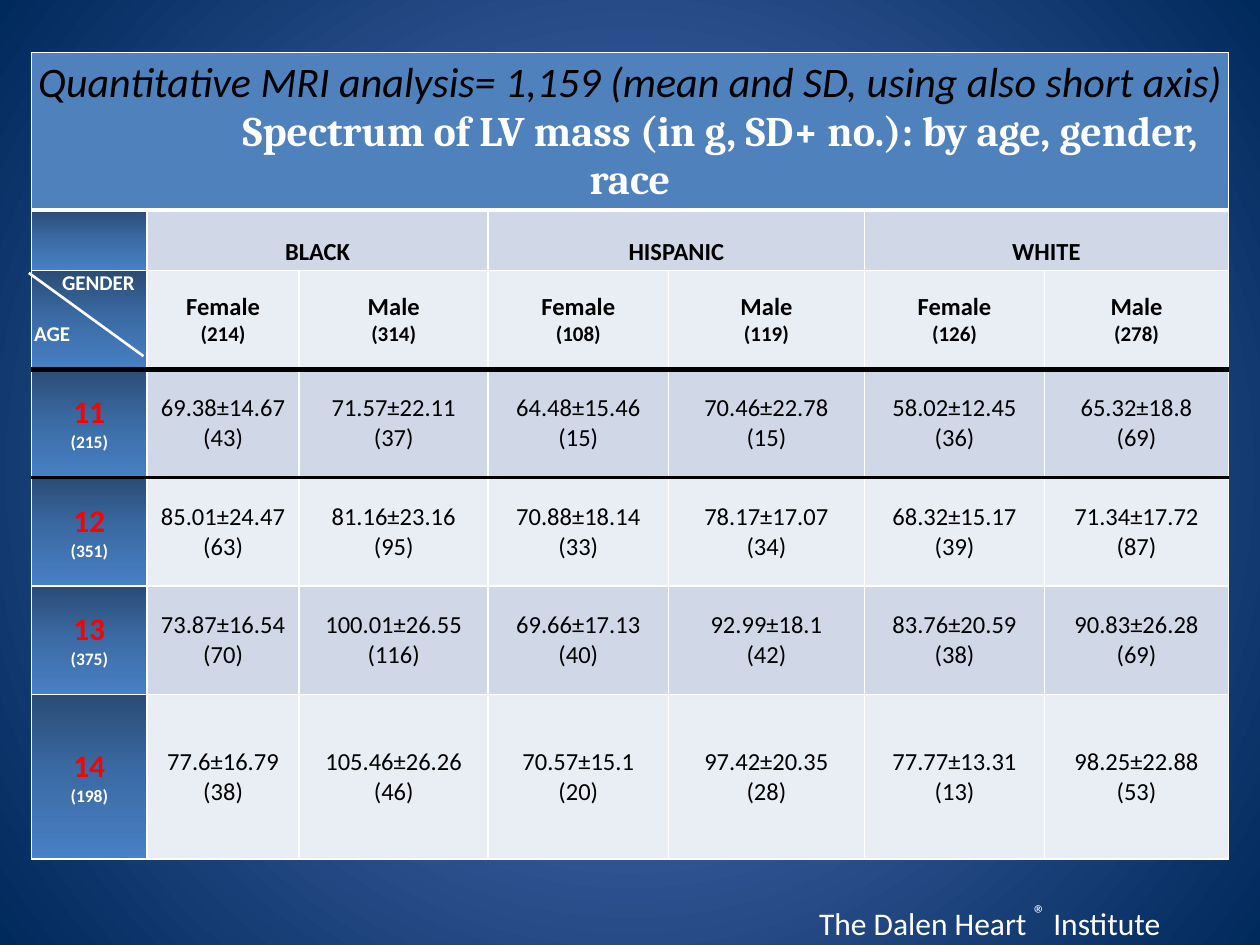
import pptx
import pptx.dml.color
import pptx.enum.shapes
import pptx.enum.text
import pptx.oxml
import pptx.oxml.ns
import pptx.util

Pt = pptx.util.Pt
RGBColor = pptx.dml.color.RGBColor
PP_ALIGN = pptx.enum.text.PP_ALIGN
MSO_ANCHOR = pptx.enum.text.MSO_ANCHOR
NS = pptx.oxml.ns.nsdecls("a")

WHITE = RGBColor(0xFF, 0xFF, 0xFF)
BLACK = RGBColor(0, 0, 0)
RED = RGBColor(0xFF, 0, 0)
TITLE_BLUE = RGBColor(0x4F, 0x81, 0xBD)
BAND_DARK = RGBColor(0xD0, 0xD8, 0xE8)
BAND_LIGHT = RGBColor(0xE9, 0xED, 0xF4)
SIDE_STOPS = [
    (0, RGBColor(0x2A, 0x4C, 0x75)),
    (50, RGBColor(0x3C, 0x6C, 0xA6)),
    (100, RGBColor(0x47, 0x80, 0xC5)),
]
BACK_STOPS = [(0, RGBColor(0x5E, 0x7C, 0xC5)), (100, RGBColor(0, 0x29, 0x5C))]
DOWNWARD = '<a:lin ang="5400000" scaled="0"/>'
RADIAL = (
    '<a:path path="circle">'
    '<a:fillToRect l="50000" t="50000" r="50000" b="50000"/></a:path>'
)

COLUMNS = [66, 87, 108, 103, 112, 103, 105]
ROWS = [90, 34.5, 56.5, 62, 62, 62, 94]
RACES = ["BLACK", "HISPANIC", "WHITE"]
GENDERS = [
    ("Female", "(214)"), ("Male", "(314)"), ("Female", "(108)"),
    ("Male", "(119)"), ("Female", "(126)"), ("Male", "(278)"),
]
AGES = [
    ("11", "(215)", [
        ("69.38±14.67", "(43)"), ("71.57±22.11", "(37)"), ("64.48±15.46", "(15)"),
        ("70.46±22.78", "(15)"), ("58.02±12.45", "(36)"), ("65.32±18.8", "(69)")]),
    ("12", "(351)", [
        ("85.01±24.47", "(63)"), ("81.16±23.16", "(95)"), ("70.88±18.14", "(33)"),
        ("78.17±17.07", "(34)"), ("68.32±15.17", "(39)"), ("71.34±17.72", "(87)")]),
    ("13", "(375)", [
        ("73.87±16.54", "(70)"), ("100.01±26.55", "(116)"), ("69.66±17.13", "(40)"),
        ("92.99±18.1", "(42)"), ("83.76±20.59", "(38)"), ("90.83±26.28", "(69)")]),
    ("14", "(198)", [
        ("77.6±16.79", "(38)"), ("105.46±26.26", "(46)"), ("70.57±15.1", "(20)"),
        ("97.42±20.35", "(28)"), ("77.77±13.31", "(13)"), ("98.25±22.88", "(53)")]),
]


def gradient(stops, direction):
    marks = "".join(
        f'<a:gs pos="{pos * 1000}"><a:srgbClr val="{color}"/></a:gs>'
        for pos, color in stops
    )
    return pptx.oxml.parse_xml(
        f'<a:gradFill {NS} rotWithShape="1"><a:gsLst>{marks}</a:gsLst>{direction}</a:gradFill>'
    )


def add_run(p, text, size, color, bold=False, italic=False, font="Calibri"):
    r = p.add_run()
    r.text = text
    r.font.size = Pt(size)
    r.font.name = font
    r.font.bold = bold
    r.font.italic = italic
    r.font.color.rgb = color
    return r


def indent(p, points):
    p._p.get_or_add_pPr().set("indent", str(Pt(points)))


def two_lines(cell, top, bottom):
    tf = cell.text_frame
    for p, run in ((tf.paragraphs[0], top), (tf.add_paragraph(), bottom)):
        p.alignment = PP_ALIGN.CENTER
        add_run(p, *run)


def rule_below(row):
    return {0: (WHITE, 3), 2: (BLACK, 3), 3: (BLACK, 2)}.get(row, (WHITE, 1))


def style_cell(cell, row, col):
    cell.margin_left = cell.margin_right = Pt(1.5)
    cell.margin_top = cell.margin_bottom = Pt(0)
    tcPr = cell._tc.get_or_add_tcPr()
    thin = (WHITE, 1)
    sides = {"L": thin, "R": thin, "T": rule_below(row - 1), "B": rule_below(row)}
    for side, (color, width) in sides.items():
        tcPr.append(pptx.oxml.parse_xml(
            f'<a:ln{side} {NS} w="{Pt(width)}"><a:solidFill>'
            f'<a:srgbClr val="{color}"/></a:solidFill></a:ln{side}>'
        ))
    if row and not col:
        tcPr.append(gradient(SIDE_STOPS, DOWNWARD))
    else:
        cell.fill.solid()
        band = BAND_DARK if row % 2 else BAND_LIGHT
        cell.fill.fore_color.rgb = band if row else TITLE_BLUE
    if row != 1 and (row, col) != (2, 0):
        cell.vertical_anchor = MSO_ANCHOR.MIDDLE


def fill_headings(table):
    title = table.cell(0, 0)
    title.merge(table.cell(0, 6))
    two_lines(
        title,
        ("Quantitative MRI analysis= 1,159 (mean and SD, using also short axis)",
         24, BLACK, False, True),
        ("Spectrum of LV mass (in g, SD+ no.): by age, gender, race",
         24, WHITE, True, False, "Cambria"),
    )
    indent(title.text_frame.paragraphs[1], 103)

    for i, race in enumerate(RACES):
        cell = table.cell(1, 1 + 2 * i)
        cell.merge(table.cell(1, 2 + 2 * i))
        p = cell.text_frame.paragraphs[0]
        p.alignment = PP_ALIGN.CENTER
        p.line_spacing = 1.9
        add_run(p, race, 14, BLACK, True)

    tf = table.cell(2, 0).text_frame
    p = tf.paragraphs[0]
    indent(p, 16)
    add_run(p, "GENDER", 12, WHITE, True)
    p = tf.add_paragraph()
    p.space_before = Pt(14.5)
    add_run(p, "AGE", 12, WHITE, True)

    for col, (gender, count) in enumerate(GENDERS, 1):
        two_lines(table.cell(2, col), (gender, 14, BLACK, True), (count, 12, BLACK, True))


def add_mass_table(s, left, top, width, height):
    table = s.shapes.add_table(
        len(ROWS), len(COLUMNS), Pt(left), Pt(top), Pt(width), Pt(height)
    ).table
    for column, points in zip(table.columns, COLUMNS):
        column.width = Pt(points)
    for row, points in zip(table.rows, ROWS):
        row.height = Pt(points)
    for row in range(len(ROWS)):
        for col in range(len(COLUMNS)):
            style_cell(table.cell(row, col), row, col)
    fill_headings(table)
    for row, (age, count, values) in enumerate(AGES, 3):
        two_lines(table.cell(row, 0), (age, 18, RED, True), (count, 10, WHITE, True))
        for col, (mass, number) in enumerate(values, 1):
            two_lines(table.cell(row, col), (mass, 14, BLACK), (number, 14, BLACK))

    line_top = top + sum(ROWS[:2])
    line = s.shapes.add_connector(
        pptx.enum.shapes.MSO_CONNECTOR.STRAIGHT,
        Pt(left + 64), Pt(line_top + 49), Pt(left - 1.5), Pt(line_top + 1.5),
    )
    line.line.color.rgb = WHITE
    line.line.width = Pt(1.5)
    line._element.spPr.append(pptx.oxml.parse_xml(f"<a:effectLst {NS}/>"))


def add_footer(s, left, top, width, height):
    tf = s.shapes.add_textbox(Pt(left), Pt(top), Pt(width), Pt(height)).text_frame
    tf.word_wrap = True
    tf.auto_size = pptx.enum.text.MSO_AUTO_SIZE.SHAPE_TO_FIT_TEXT
    p = tf.paragraphs[0]
    indent(p, 65)
    add_run(p, "The Dalen Heart ", 18, WHITE)
    mark = add_run(p, "®", 24, WHITE)
    mark.font._element.set("baseline", "30000")
    add_run(p, " Institute", 18, WHITE)


def main():
    prs = pptx.Presentation()
    prs.slide_width, prs.slide_height = Pt(720), Pt(540)
    s = prs.slides.add_slide(prs.slide_layouts[6])
    s.background.fill.solid()
    bgPr = s._element.cSld.bg.bgPr
    bgPr.replace(bgPr[0], gradient(BACK_STOPS, RADIAL))
    add_mass_table(s, 18, 30, sum(COLUMNS), sum(ROWS))
    add_footer(s, 396, 507, 288, 36)
    prs.save("out.pptx")


if __name__ == "__main__":
    main()
